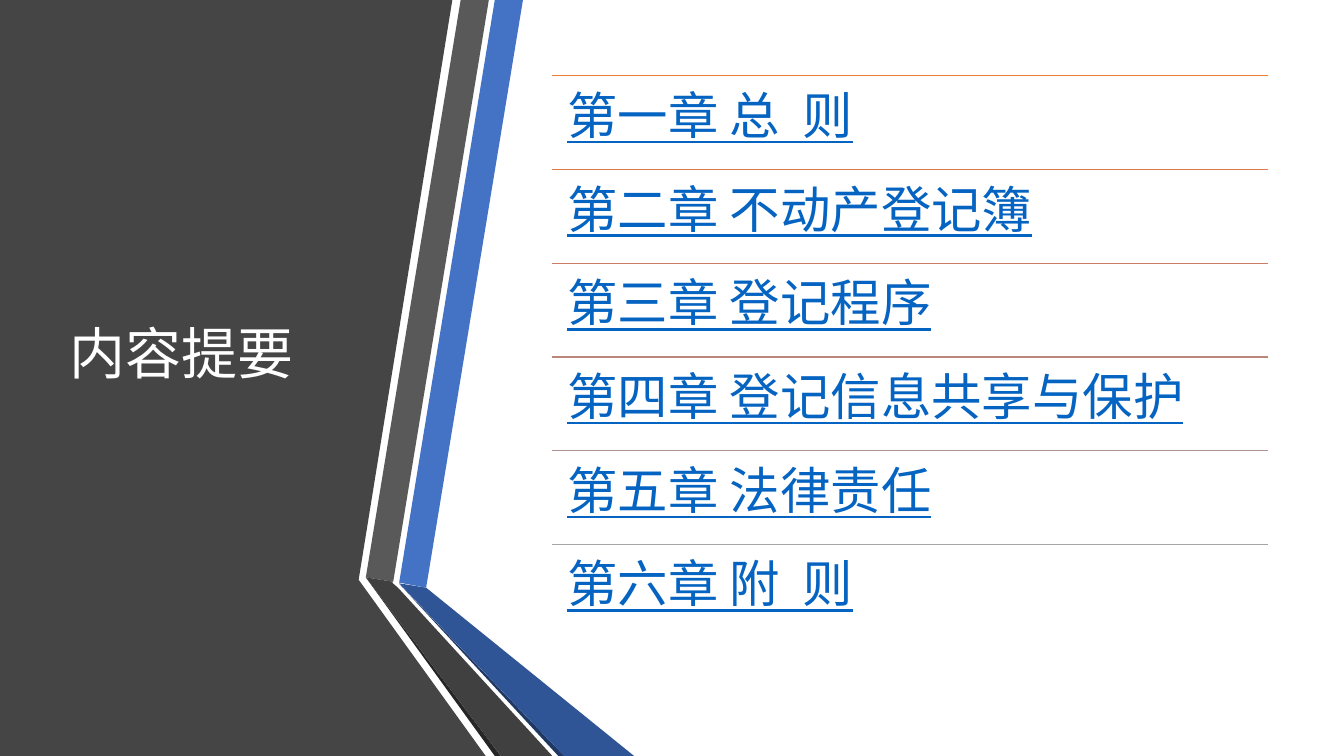
from dataclasses import dataclass

from lxml import etree
from pptx import Presentation
from pptx import util as u
from pptx.dml.color import RGBColor
from pptx.enum import shapes, text
from pptx.oxml.ns import qn


@dataclass(frozen=True)
class Theme:
    """Colours, font and type sizes of the slide."""
    font: str = "Noto Sans CJK SC"
    title_size: int = 40
    item_size: int = 36
    title: str = "FFFFFF"
    link: str = "0563C1"
    panel: str = "454545"
    blue: str = "4472C4"
    blue_fold: str = "2F5597"
    blue_edge: str = "203864"
    grey: str = "595959"
    grey_fold: str = "404040"
    grey_edge: str = "262626"
    rules: tuple = ("ED7D31", "DC7A4B", "CC7D64", "BD867B", "B09391", "A5A5A5")


THEME = Theme()
WIDTH, HEIGHT = 33.87, 19.05
CHAPTERS = (
    "第一章 总  则",
    "第二章 不动产登记簿",
    "第三章 登记程序",
    "第四章 登记信息共享与保护",
    "第五章 法律责任",
    "第六章 附  则",
)
RIBBON = (
    (THEME.panel, [(0, 0), (11.4, 0), (9.04, 14.61), (12.24, HEIGHT), (0, HEIGHT)]),
    (THEME.blue, [(10.06, 14.68), (10.74, 14.81), (13.18, 0), (12.47, 0)]),
    (THEME.grey, [(12.32, 0), (11.61, 0), (9.22, 14.55), (9.91, 14.66)]),
    (THEME.grey_edge, [(9.22, 14.55), (12.47, HEIGHT), (12.62, HEIGHT)]),
    (THEME.blue_edge, [(10.06, 14.71), (14.07, HEIGHT), (14.22, HEIGHT)]),
    (THEME.blue_fold, [(10.06, 14.7), (14.22, HEIGHT), (15.98, HEIGHT), (10.74, 14.81)]),
    (THEME.grey_fold, [(13.92, HEIGHT), (10.03, 14.81), (9.88, 14.68), (9.91, 14.66),
                       (9.22, 14.55), (12.62, HEIGHT)]),
)


def format_text(tf, size, color, underline=False):
    """Format the first paragraph of a text frame."""
    tf.word_wrap = True
    p = tf.paragraphs[0]
    p.alignment = text.PP_ALIGN.LEFT
    p.line_spacing = 0.9
    r = p.runs[0]
    r.font.size = u.Pt(size)
    r.font.color.rgb = RGBColor.from_string(color)
    r.font.underline = underline
    r.font.name = THEME.font
    etree.SubElement(r._r.get_or_add_rPr(), qn("a:ea"), typeface=THEME.font)


def add_ribbon(s, left, top):
    """Draw the dark panel and its folded ribbons from a top-left corner."""
    for color, points in RIBBON:
        corners = [(u.Cm(left + x), u.Cm(top + y)) for x, y in points]
        builder = s.shapes.build_freeform(*corners[0], scale=1.0)
        builder.add_line_segments(corners[1:], close=True)
        sp = builder.convert_to_shape()
        sp.shadow.inherit = False
        sp.fill.solid()
        sp.fill.fore_color.rgb = RGBColor.from_string(color)
        sp.line.fill.background()


def add_title(s, left, top, width, height):
    """Place the title, centred vertically in its box."""
    sp = s.shapes.title
    sp.left, sp.top, sp.width, sp.height = map(u.Cm, (left, top, width, height))
    tf = sp.text_frame
    tf.text = "内容提要"
    tf.vertical_anchor = text.MSO_ANCHOR.MIDDLE
    format_text(tf, THEME.title_size, THEME.title)


def add_chapters(s, left, top, width, height):
    """List the chapters in equal rows, each under a coloured rule."""
    row = height / len(CHAPTERS)
    for i, (chapter, color) in enumerate(zip(CHAPTERS, THEME.rules)):
        x, y, w = u.Cm(left), u.Cm(top + i * row), u.Cm(width)
        rule = s.shapes.add_connector(shapes.MSO_CONNECTOR.STRAIGHT, x, y, x + w, y)
        rule.line.color.rgb = RGBColor.from_string(color)
        rule.line.width = u.Pt(1)
        etree.SubElement(rule._element.spPr, qn("a:effectLst"))
        tf = s.shapes.add_textbox(x, y, w, u.Cm(row)).text_frame
        tf.margin_left = tf.margin_right = u.Cm(0.38)
        tf.margin_top = tf.margin_bottom = u.Cm(0.38)
        tf.text = chapter
        format_text(tf, THEME.item_size, THEME.link, underline=True)


def main():
    """Build and save the contents slide."""
    prs = Presentation()
    prs.slide_width, prs.slide_height = u.Cm(WIDTH), u.Cm(HEIGHT)
    s = prs.slides.add_slide(prs.slide_layouts.get_by_name("Title Only"))
    add_ribbon(s, 0, 0)
    title = s.shapes.title._element
    s.shapes._spTree.append(title)
    add_title(s, 1.5, 1.9, 7.72, 14.17)
    add_chapters(s, 13.92, 1.91, 18.03, 14.17)
    prs.save("out.pptx")


if __name__ == "__main__":
    main()
